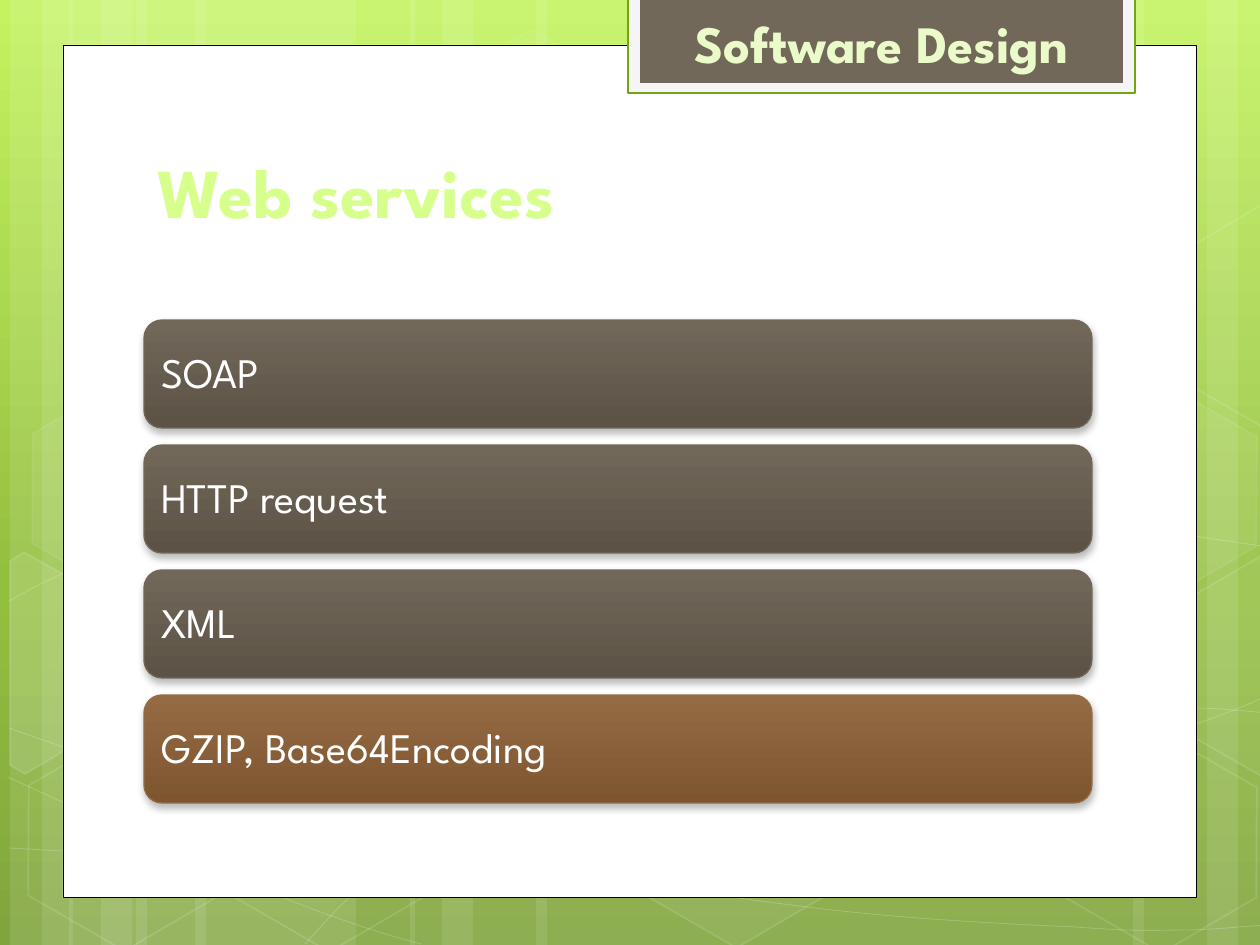
import pptx
import pptx.util
import pptx.dml.color
import pptx.enum.shapes
import pptx.enum.text
import pptx.oxml
import pptx.oxml.ns
import copy

SCALE = 914400 / 126  # EMU in one px
KIND = pptx.enum.shapes.MSO_SHAPE
ANCHOR = pptx.enum.text.MSO_ANCHOR
ALIGN = pptx.enum.text.PP_ALIGN
SPACE = pptx.oxml.ns.nsdecls("a")
qn = pptx.oxml.ns.qn


class Theme:
    font = "League Spartan"
    white, black = "FFFFFF", "000000"
    back = [(0, "C3F35F"), (62, "93BF3F"), (100, "81A53E")]
    rim, edge, tab = "F5F5F5", "74A510", "71685A"
    title, head = "D6FF8C", "EAFAC9"
    stone = [(0, "71685A"), (100, "5C5346")]
    wood = [(0, "956B43"), (100, "7D552F")]
    title_size, head_size, bar_size = 40, 30, 24


# Background art: each curve is a start point and its cubic segments
CURVES = [
    [(9, 848), (77, 852, 145, 856, 239, 854), (334, 853, 451, 851, 577, 838),
     (703, 825, 882, 801, 998, 777), (1113, 753, 1231, 716, 1269, 694)],
    [(9, 601), (45, 581, 82, 562, 152, 543), (227, 522, 326, 496, 437, 488),
     (549, 479, 685, 478, 824, 488), (963, 498, 1193, 537, 1269, 547)],
    [(8, 777), (160, 847, 311, 916, 421, 944)],
    [(9, 728), (48, 742, 88, 756, 161, 776), (234, 795, 344, 827, 450, 848),
     (554, 869, 687, 892, 791, 905), (896, 919, 1008, 924, 1075, 927),
     (1140, 932, 1158, 930, 1191, 930), (1223, 929, 1246, 926, 1269, 925)],
    [(305, 944), (328, 919, 350, 893, 381, 871), (412, 848, 454, 823, 489, 805),
     (524, 788, 546, 780, 592, 767), (638, 754, 722, 737, 766, 728),
     (811, 719, 818, 719, 857, 717), (896, 713, 958, 709, 1000, 708),
     (1045, 707, 1116, 708, 1116, 708), (1144, 708, 1173, 708, 1201, 708),
     (1223, 709, 1245, 711, 1268, 713)],
]
# Left, top, fill opacity, line opacity
CELLS = [(421, 45, 4, 8), (626, 742, 6, 12), (14, 745, 0, 12), (18, 393, 7, 8),
         (219, 746, 0, 12), (1051, 747, 0, 12), (1051, 396, 7, 8)]
# Cells cut by the slide edge: fill opacity and corners
CUTS = [
    (10, [(10, 561), (24, 552), (121, 607), (120, 718), (25, 774), (10, 765)]),
    (4, [(1167, 611), (1261, 556), (1271, 562), (1271, 772), (1263, 777), (1167, 722)]),
    (0, [(1167, 261), (1261, 205), (1273, 212), (1271, 422), (1263, 427), (1167, 372)]),
]


def px(num):
    return pptx.util.Emu(round(num * SCALE))


def rgb(code):
    return pptx.dml.color.RGBColor.from_string(code)


def fade(shape, where, part):
    """Set the opacity, in percent, of a solid colour."""
    color = shape.element.find(f"{qn('p:spPr')}/{where}{qn('a:solidFill')}/{qn('a:srgbClr')}")
    color.append(pptx.oxml.parse_xml(f'<a:alpha {SPACE} val="{part * 1000}"/>'))


def paint(shape, fill=None, line=None, width=1, glass=100, sheen=100):
    shape.shadow.inherit = False
    if fill and glass:
        shape.fill.solid()
        shape.fill.fore_color.rgb = rgb(fill)
        if glass < 100:
            fade(shape, "", glass)
    else:
        shape.fill.background()
    if line:
        shape.line.color.rgb = rgb(line)
        shape.line.width = pptx.util.Pt(width)
        if sheen < 100:
            fade(shape, qn("a:ln") + "/", sheen)
    else:
        shape.line.fill.background()


def blend(fill, owner, stops):
    """Fill from top to bottom with the given stops."""
    fill.gradient()
    fill.gradient_angle = 270
    items = next(owner.iter(qn("a:gsLst")))
    while len(items) < len(stops):
        items.append(copy.deepcopy(items[-1]))
    for stop, (place, code) in zip(fill.gradient_stops, stops):
        stop.position = place / 100
        stop.color.rgb = rgb(code)


def add(slide, kind, box):
    return slide.shapes.add_shape(kind, *map(px, box))


def write(shape, text, size, color, bold=False, align=ALIGN.LEFT, pads=(0, 0, 0, 0)):
    frame = shape.text_frame
    frame.text = text
    frame.word_wrap = True
    frame.auto_size = pptx.enum.text.MSO_AUTO_SIZE.NONE
    frame.vertical_anchor = ANCHOR.MIDDLE
    (frame.margin_left, frame.margin_top,
     frame.margin_right, frame.margin_bottom) = map(px, pads)
    para = frame.paragraphs[0]
    para.alignment = align
    font = para.runs[0].font
    font.name, font.size, font.bold = Theme.font, pptx.util.Pt(size), bold
    font.color.rgb = rgb(color)
    return para


def trace(slide, dots, close):
    pen = slide.shapes.build_freeform(*dots[0], scale=SCALE)
    pen.add_line_segments(dots[1:], close=close)
    return pen.convert_to_shape()


def bend(slide, curve):
    """Trace the end points, then turn each straight step into a cubic one."""
    dots = [seg[-2:] for seg in curve]
    shape = trace(slide, dots, False)
    left, top = (min(axis) for axis in zip(*dots))
    steps = list(shape.element.iter(qn("a:lnTo")))
    for step, (ax, ay, bx, by, ex, ey) in zip(steps, curve[1:]):
        points = "".join(f'<a:pt x="{x - left}" y="{y - top}"/>'
                         for x, y in ((ax, ay), (bx, by), (ex, ey)))
        step.getparent().replace(step, pptx.oxml.parse_xml(
            f"<a:cubicBezTo {SPACE}>{points}</a:cubicBezTo>"))
    return shape


def draw_back(slide, box):
    left, top, wide, high = box
    blend(slide.background.fill, slide.element, Theme.back)
    # Stripes: sets of three, one set mirrored
    for base, side, broad in ((10, 1, 220), (69, 1, 220), (1270, -1, 220), (410, 1, 388)):
        for step, width in ((126, broad), (0, 63), (32, 105)):
            start = base + step if side > 0 else base - step - width
            width = min(width, wide - start)
            paint(add(slide, KIND.RECTANGLE, (left + start, top, width, high)),
                  Theme.white, glass=10)
    # Thin curves
    for curve in CURVES:
        paint(bend(slide, curve), line=Theme.white, width=0.5, sheen=20)
    # Honeycomb
    for x, y, glass, sheen in CELLS:
        cell = add(slide, KIND.HEXAGON, (left + x, top + y, 220, 191))
        cell.adjustments[0] = 0.285
        cell.rotation = 30
        paint(cell, Theme.white, Theme.white, 1, glass, sheen)
    for glass, dots in CUTS:
        cut = trace(slide, [(left + x, top + y) for x, y in dots], True)
        paint(cut, Theme.white, Theme.white, 1, glass, 12)


def draw_panel(slide, box):
    paint(add(slide, KIND.RECTANGLE, box), Theme.white, Theme.black, 0.5)


def draw_tab(slide, box, text):
    left, top, wide, high = box
    paint(add(slide, KIND.RECTANGLE, box), Theme.rim, Theme.edge, 1.25)
    inner = (left + 12, top, wide - 24, high - 10)
    paint(add(slide, KIND.RECTANGLE, inner), Theme.tab)
    label = slide.shapes.add_textbox(*map(px, (left + 12, top + 3, wide - 24, high - 12)))
    write(label, text, Theme.head_size, Theme.head, True, ALIGN.CENTER, (13, 6, 13, 6))


def draw_title(slide, box, text):
    title = slide.shapes.title
    title.left, title.top, title.width, title.height = map(px, box)
    write(title, text, Theme.title_size, Theme.title, True, pads=(13, 6, 13, 64))
    # Bring the title in front of the panel
    title.element.getparent().append(title.element)


def draw_bars(slide, box, rows, gap=17):
    left, top, wide, high = box
    tall = (high - gap * (len(rows) - 1)) // len(rows)
    for num, (text, stops) in enumerate(rows):
        bar = add(slide, KIND.ROUNDED_RECTANGLE, (left, top + num * (tall + gap), wide, tall))
        paint(bar, line=stops[0][1], width=0.75)
        blend(bar.fill, bar.element, stops)
        bar.element.spPr.find(qn("a:effectLst")).append(pptx.oxml.parse_xml(
            f'<a:outerShdw {SPACE} blurRad="50800" dist="25400" '
            f'dir="5400000" rotWithShape="0"><a:srgbClr val="{Theme.black}">'
            '<a:alpha val="28000"/></a:srgbClr></a:outerShdw>'))
        para = write(bar, text, Theme.bar_size, Theme.white, pads=(12, 14, 12, 12))
        para.line_spacing = 0.9


def main():
    deck = pptx.Presentation()
    deck.slide_width, deck.slide_height = px(1260), px(945)
    slide = deck.slides.add_slide(deck.slide_layouts[5])
    draw_back(slide, (0, 0, 1260, 945))
    draw_panel(slide, (63, 45, 1134, 853))
    draw_tab(slide, (628, -3, 507, 96), "Software Design")
    draw_title(slide, (144, 141, 968, 158), "Web services")
    draw_bars(slide, (144, 320, 948, 483), [
        ("SOAP", Theme.stone), ("HTTP request", Theme.stone),
        ("XML", Theme.stone), ("GZIP, Base64Encoding", Theme.wood)])
    deck.save("out.pptx")


if __name__ == "__main__":
    main()
